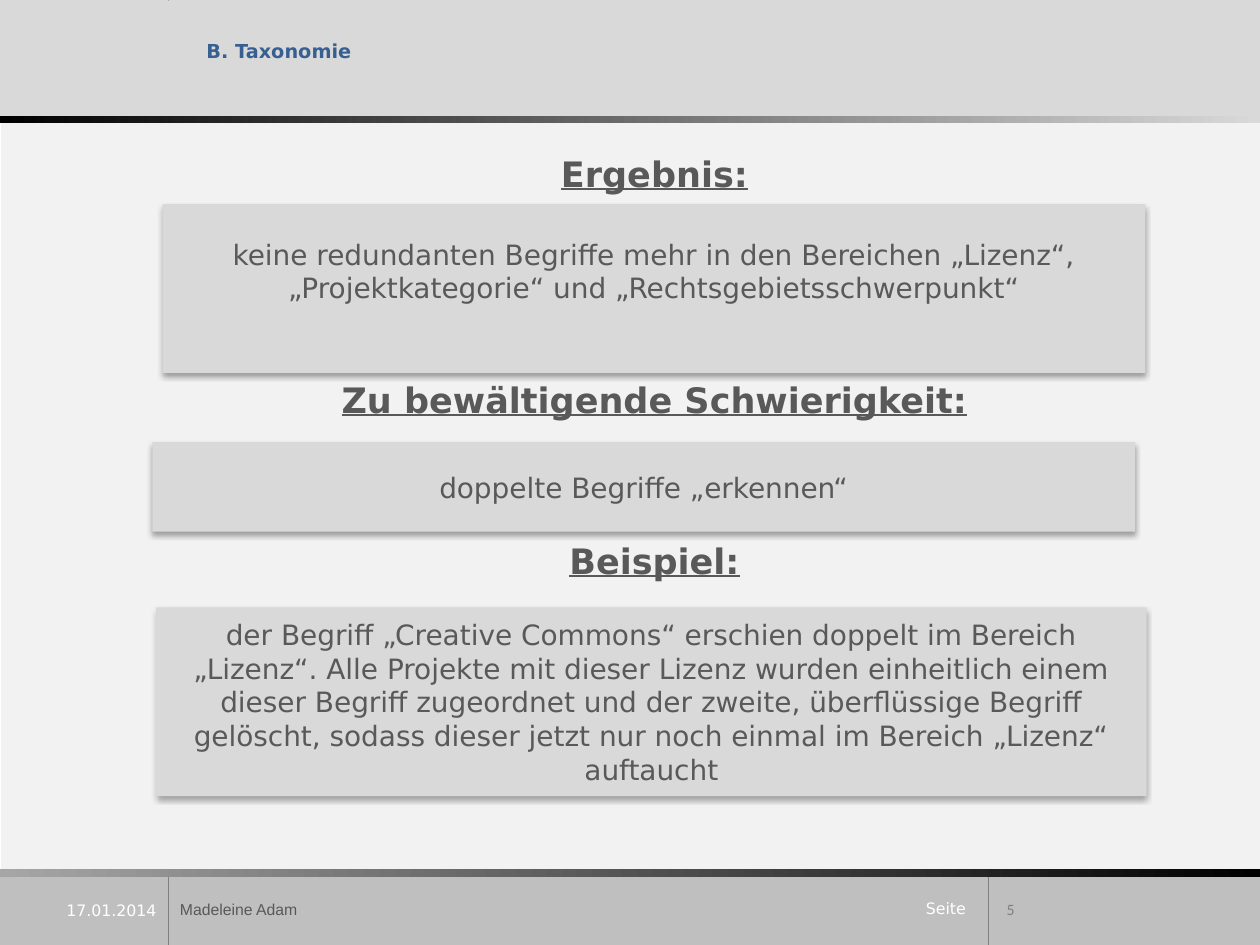
from dataclasses import dataclass

from lxml import etree
from pptx import Presentation
from pptx.dml.color import RGBColor
from pptx.enum.shapes import MSO_CONNECTOR, MSO_SHAPE
from pptx.enum.text import MSO_ANCHOR, PP_ALIGN
from pptx.oxml.ns import qn
from pptx.util import Inches, Pt

RECT = MSO_SHAPE.RECTANGLE
LINE = MSO_CONNECTOR.STRAIGHT
MID = MSO_ANCHOR.MIDDLE
LEFT, MIDST, RIGHT = PP_ALIGN.LEFT, PP_ALIGN.CENTER, PP_ALIGN.RIGHT


@dataclass(frozen=True)
class Theme:
    black: str = "000000"
    white: str = "FFFFFF"
    pale: str = "F2F2F2"
    light: str = "D9D9D9"
    foot: str = "BFBFBF"
    mist: str = "A6A6A6"
    gray: str = "808080"
    page: str = "7F7F7F"
    ink: str = "595959"
    blue: str = "376092"
    font: str = "DejaVu Sans"
    note: int = 9
    top: int = 11
    body: int = 16
    head: int = 20


class Deck:
    """Draws styled parts on a slide, measured on a grid of 100 columns by 75 rows."""

    def __init__(self, theme):
        self.theme = theme
        self.file = Presentation()
        self.file.slide_width, self.file.slide_height = Inches(10), Inches(7.5)
        self.cell = self.file.slide_width / 100
        self.slide = self.file.slides.add_slide(self.file.slide_layouts[6])

    def span(self, *cells):
        return [round(n * self.cell) for n in cells]

    def letter(self, shape, text, size, color, align, font=None, bold=False, under=False):
        frame = shape.text_frame
        frame.word_wrap = True
        frame.vertical_anchor = MID
        para = frame.paragraphs[0]
        para.alignment = align
        run = para.add_run()
        run.text = text
        face = run.font
        face.name, face.size = font or self.theme.font, Pt(size)
        face.bold, face.underline = bold, under
        face.color.rgb = RGBColor.from_string(color)

    def block(self, area, *colors):
        shape = self.slide.shapes.add_shape(RECT, *self.span(*area))
        shape.shadow.inherit = False
        shape.line.fill.background()
        if len(colors) == 1:
            shape.fill.solid()
            shape.fill.fore_color.rgb = RGBColor.from_string(colors[0])
        else:
            shape.fill.gradient()
            shape.fill.gradient_angle = 0
            for stop, color in zip(shape.fill.gradient_stops, colors):
                stop.color.rgb = RGBColor.from_string(color)
        return shape

    def rule(self, ends, color):
        line = self.slide.shapes.add_connector(LINE, *self.span(*ends))
        line.line.width = Pt(0.5)
        line.line.color.rgb = RGBColor.from_string(color)
        etree.SubElement(line._element.spPr, qn("a:effectLst"))

    def label(self, area, text, size, color, align=LEFT, **style):
        box = self.slide.shapes.add_textbox(*self.span(*area))
        self.letter(box, text, size, color, align, **style)

    def panel(self, area, text, lift=0):
        look = self.theme
        shape = self.block(area, look.light)
        effects = shape._element.spPr.find(qn("a:effectLst"))
        shade = etree.SubElement(
            effects, qn("a:outerShdw"), blurRad=str(Pt(3.1)), dist=str(Pt(1.8)),
            dir="5400000", rotWithShape="0")
        tint = etree.SubElement(shade, qn("a:srgbClr"), val=look.black)
        etree.SubElement(tint, qn("a:alpha"), val="35000")
        self.letter(shape, text, look.body, look.ink, MIDST)
        shape.text_frame.margin_bottom = Inches(0.05 + lift)

    def save(self):
        self.file.save("out.pptx")


def main():
    look = Theme()
    deck = Deck(look)

    deck.block((0, 0, 100, 9.2), look.light)
    deck.block((0.1, 9.3, 100, 59.8), look.pale)
    deck.rule((13.4, 0, 13.4, 9.3), look.mist)
    deck.block((0, 69.3, 100, 5.7), look.foot)
    for col in (13.4, 78.45):
        deck.rule((col, 69.3, col, 75), look.gray)
    deck.rule((13.4, 0.1, 13.4, 9.3), look.light)
    deck.block((0, 9.2, 100, 0.6), look.black, look.light)
    deck.block((0, 69, 100, 0.6), look.mist, look.black)

    deck.label((15.4, 2.5, 38.3, 3.1), "B. Taxonomie", look.top, look.blue, bold=True)
    heads = ((13.8, "Ergebnis:"), (31.7, "Zu bewältigende Schwierigkeit:"),
             (44.5, "Beispiel:"))
    for row, text in heads:
        deck.label((11.8, row - 2.2, 80.3, 4.4), text, look.head, look.ink, MIDST,
                   bold=True, under=True)

    deck.panel((12.9, 16.2, 78, 13.4),
               "keine redundanten Begriffe mehr in den Bereichen „Lizenz“, "
               "„Projektkategorie“ und „Rechtsgebietsschwerpunkt“", lift=0.28)
    deck.panel((12.1, 35.1, 78, 7.1), "doppelte Begriffe „erkennen“")
    deck.panel((12.4, 48.2, 78.6, 15),
               "der Begriff „Creative Commons“ erschien doppelt im Bereich „Lizenz“. "
               "Alle Projekte mit dieser Lizenz wurden einheitlich einem dieser Begriff "
               "zugeordnet und der zweite, überflüssige Begriff gelöscht, sodass dieser "
               "jetzt nur noch einmal im Bereich „Lizenz“ auftaucht")

    deck.label((3.3, 70.3, 10.1, 3.9), "17.01.2014", look.note, look.white, RIGHT)
    deck.label((13.3, 70.2, 59.2, 4), "Madeleine Adam", look.note, look.ink, font="Arial")
    deck.label((72.5, 70.8, 5.7, 2.5), "Seite", look.note, look.white)
    deck.label((78.9, 70.2, 16.1, 4), "5", look.note, look.page, font="Calibri")
    deck.save()


if __name__ == "__main__":
    main()
